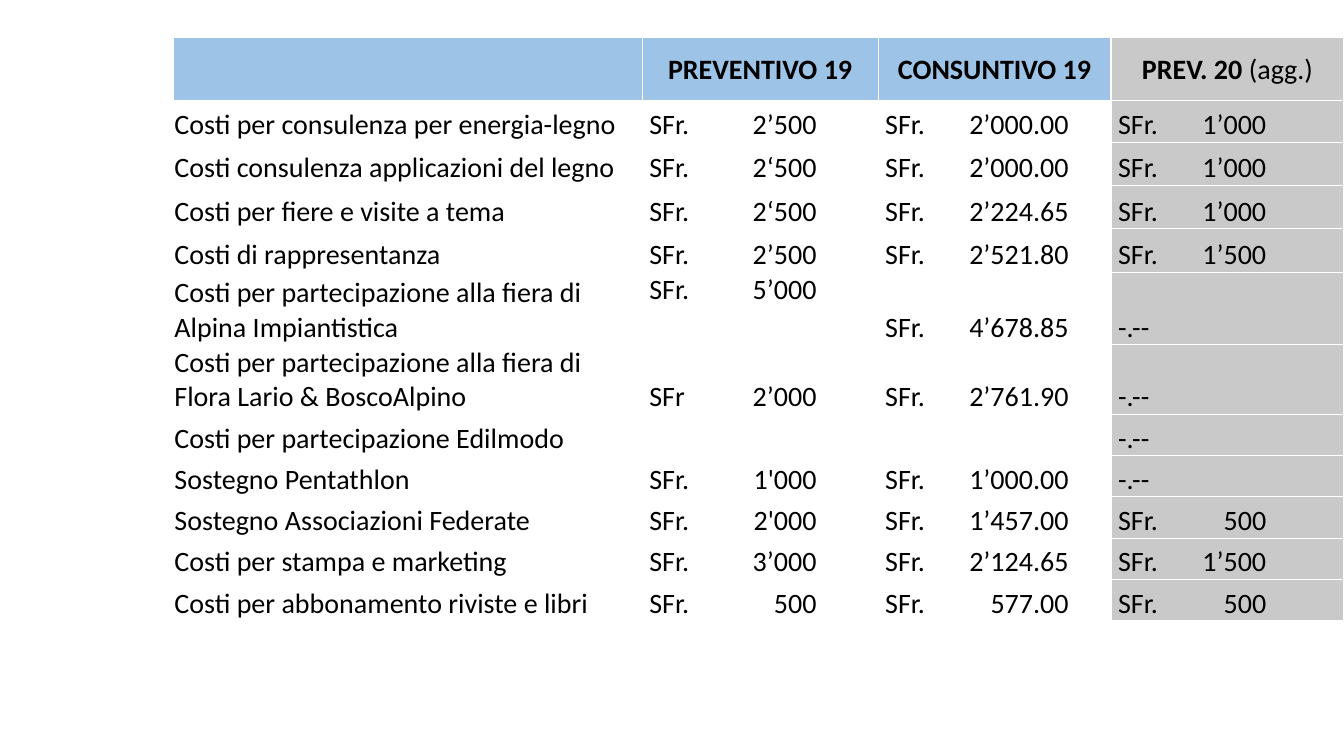
from dataclasses import dataclass

from lxml.etree import SubElement
from pptx import Presentation
from pptx.dml.color import RGBColor
from pptx.enum.text import MSO_ANCHOR, PP_ALIGN
from pptx.oxml import parse_xml
from pptx.oxml.ns import nsdecls, qn
from pptx.util import Inches, Pt


@dataclass(frozen=True)
class Theme:
    font: str = "Calibri"
    size: int = 20
    text: str = "000000"
    header: str = "9DC3E6"
    forecast: str = "C9C9C9"
    border: str = "FFFFFF"
    border_width: int = 1


class SlideBuilder:
    def __init__(self, prs, theme):
        self.theme = theme
        self.s = prs.slides.add_slide(prs.slide_layouts[6])

    def table(self, left, top, widths, heights):
        frame = self.s.shapes.add_table(
            len(heights), len(widths), Inches(left), Inches(top),
            Inches(sum(widths)), Inches(sum(heights)))
        table = frame.table
        table.first_row = table.horz_banding = False
        for column, width in zip(table.columns, widths):
            column.width = Inches(width)
        for row, height in zip(table.rows, heights):
            row.height = Inches(height)
        return table

    def cell(self, cell, parts, fill=None, anchor=MSO_ANCHOR.BOTTOM,
             align=PP_ALIGN.LEFT, inset=0.01, tab=None):
        """Fill a cell with (text, bold) parts; tab is a right-aligned stop."""
        cell.margin_left = Inches(inset)
        cell.margin_right = cell.margin_top = Inches(0.01)
        cell.margin_bottom = 0
        cell.vertical_anchor = anchor
        if fill:
            cell.fill.solid()
            cell.fill.fore_color.rgb = RGBColor.from_string(fill)
        else:
            cell.fill.background()
        self.borders(cell)

        p = cell.text_frame.paragraphs[0]
        p.alignment = align
        if tab:
            tabs = SubElement(p._p.get_or_add_pPr(), qn("a:tabLst"))
            SubElement(tabs, qn("a:tab"), pos=str(Inches(tab)), algn="r")
        for text, bold in parts:
            r = p.add_run()
            r.text = text
            r.font.name = self.theme.font
            r.font.size = Pt(self.theme.size)
            r.font.bold = bold
            r.font.color.rgb = RGBColor.from_string(self.theme.text)

    def borders(self, cell):
        tc_pr = cell._tc.get_or_add_tcPr()
        for i, side in enumerate("LRTB"):
            tc_pr.insert(i, parse_xml(
                f'<a:ln{side} {nsdecls("a")} w="{Pt(self.theme.border_width)}">'
                f'<a:solidFill><a:srgbClr val="{self.theme.border}"/></a:solidFill>'
                f'</a:ln{side}>'))


# Header parts: (text, bold)
HEADERS = [
    [],
    [("PREVENTIVO 19", True)],
    [("CONSUNTIVO 19", True)],
    [("PREV. 20 ", True), ("(agg.)", False)],
]

# Cost item, budget 19, actual 19, budget 20
COSTS = [
    ("Costi per consulenza per energia-legno", "SFr.\t2’500", "SFr.\t2’000.00", "SFr.\t1’000"),
    ("Costi consulenza applicazioni del legno", "SFr.\t2‘500", "SFr.\t2’000.00", "SFr.\t1’000"),
    ("Costi per fiere e visite a tema", "SFr.\t2‘500", "SFr.\t2’224.65", "SFr.\t1’000"),
    ("Costi di rappresentanza", "SFr.\t2’500", "SFr.\t2’521.80", "SFr.\t1’500"),
    ("Costi per partecipazione alla fiera di Alpina Impiantistica",
     "SFr.\t5’000", "SFr.\t4’678.85", "-.--"),
    ("Costi per partecipazione alla fiera di Flora Lario & BoscoAlpino",
     "SFr\t2’000", "SFr.\t2’761.90", "-.--"),
    ("Costi per partecipazione Edilmodo", "", "", "-.--"),
    ("Sostegno Pentathlon", "SFr.\t1'000", "SFr.\t1’000.00", "-.--"),
    ("Sostegno Associazioni Federate", "SFr.\t2'000", "SFr.\t1’457.00", "SFr.\t500"),
    ("Costi per stampa e marketing", "SFr.\t3’000", "SFr.\t2’124.65", "SFr.\t1’500"),
    ("Costi per abbonamento riviste e libri", "SFr.\t500", "SFr.\t577.00", "SFr.\t500"),
]
WIDTHS = [4.65, 2.34, 2.31, 2.31]
HEIGHTS = [0.63, 0.41] + [0.43] * 3 + [0.72, 0.68] + [0.41] * 5
AMOUNT_TABS = [None, 1.66, 1.82, 1.47]
FORECAST_COLUMN = 3
TOP_AMOUNT = (5, 1)  # the one amount level with the first line of its label


def main():
    prs = Presentation()
    prs.slide_width, prs.slide_height = Inches(13.33), Inches(7.5)
    theme = Theme()
    slide = SlideBuilder(prs, theme)
    table = slide.table(1.72, 0.37, WIDTHS, HEIGHTS)

    # Header row
    for col, parts in enumerate(HEADERS):
        fill = theme.forecast if col == FORECAST_COLUMN else theme.header
        slide.cell(table.cell(0, col), parts, fill, MSO_ANCHOR.MIDDLE, PP_ALIGN.CENTER)

    # Cost rows
    for row, values in enumerate(COSTS, start=1):
        for col, text in enumerate(values):
            slide.cell(
                table.cell(row, col), [(text, False)],
                fill=theme.forecast if col == FORECAST_COLUMN else None,
                anchor=MSO_ANCHOR.TOP if (row, col) == TOP_AMOUNT else MSO_ANCHOR.BOTTOM,
                inset=0.07 if col else 0.01,
                tab=AMOUNT_TABS[col] if "\t" in text else None)

    prs.save("out.pptx")


if __name__ == "__main__":
    main()
